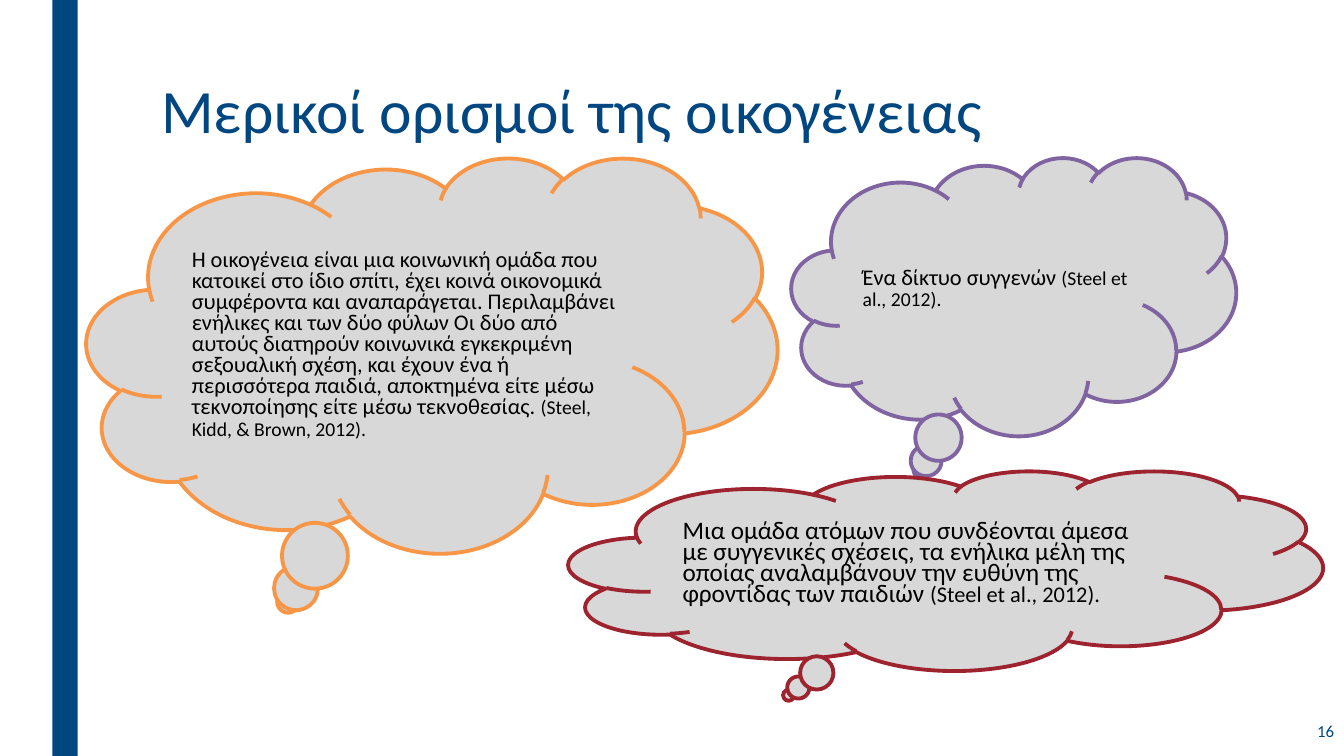
from pptx import Presentation
from pptx.dml.color import RGBColor
from pptx.enum.shapes import MSO_SHAPE as Kind
from pptx.enum.text import MSO_ANCHOR as Anchor, MSO_AUTO_SIZE as Fit, PP_ALIGN as Align
from pptx.util import Inches, Pt


def color(code):
    return RGBColor.from_string(code)


def style(para, size, code):
    para.font.name = "Calibri"
    para.font.size = Pt(size)
    para.font.color.rgb = color(code)


NAVY = "004680"

deck = Presentation()
deck.slide_width = Inches(13.33)
deck.slide_height = Inches(7.5)
slide = deck.slides.add_slide(deck.slide_layouts[5])
shapes = slide.shapes

bar = shapes.add_shape(Kind.RECTANGLE, Inches(0.52), 0, Inches(0.25), Inches(7.5))
bar.shadow.inherit = False
bar.fill.solid()
bar.fill.fore_color.rgb = color(NAVY)
bar.line.fill.background()

title = shapes.title
title.left, title.top = Inches(1.5), Inches(0.75)
title.width, title.height = Inches(10.5), Inches(1.62)
frame = title.text_frame
frame.text = "Μερικοί ορισμοί της οικογένειας"
frame.auto_size = Fit.NONE
frame.vertical_anchor = Anchor.TOP
para = frame.paragraphs[0]
para.alignment = Align.LEFT
para.line_spacing = 0.89
style(para, 44, NAVY)

page = shapes.add_textbox(Inches(11.58), Inches(7.03), Inches(1.75), Inches(0.44))
frame = page.text_frame
frame.word_wrap = True
frame.vertical_anchor = Anchor.MIDDLE
frame.text = "16"
para = frame.paragraphs[0]
para.alignment = Align.RIGHT
style(para, 12, NAVY)

clouds = [
    ((0.86, 1.56, 6.85, 3.92), "F79646", 16,
     "Η οικογένεια είναι μια κοινωνική ομάδα που κατοικεί στο ίδιο σπίτι, "
     "έχει κοινά οικονομικά συμφέροντα και αναπαράγεται. Περιλαμβάνει ενήλικες "
     "και των δύο φύλων Οι δύο από αυτούς διατηρούν κοινωνικά εγκεκριμένη "
     "σεξουαλική σχέση, και έχουν ένα ή περισσότερα παιδιά, αποκτημένα είτε "
     "μέσω τεκνοποίησης είτε μέσω τεκνοθεσίας. ",
     "(Steel, Kidd, & Brown, 2012)."),
    ((7.85, 1.56, 4.41, 2.76), "8064A2", 16,
     "Ένα δίκτυο συγγενών ",
     "(Steel et al., 2012)."),
    ((5.64, 4.67, 7.48, 1.98), "9D232F", 18,
     "Μια ομάδα ατόμων που συνδέονται άμεσα με συγγενικές σχέσεις, τα ενήλικα "
     "μέλη της οποίας αναλαμβάνουν την ευθύνη της φροντίδας των παιδιών ",
     "(Steel et al., 2012)."),
]
for box, edge, size, text, source in clouds:
    cloud = shapes.add_shape(Kind.CLOUD_CALLOUT, *map(Inches, box))
    cloud.shadow.inherit = False
    cloud.fill.solid()
    cloud.fill.fore_color.rgb = color("D8D8D8")
    cloud.line.color.rgb = color(edge)
    cloud.line.width = Pt(2.75)
    frame = cloud.text_frame
    frame.word_wrap = True
    frame.vertical_anchor = Anchor.MIDDLE
    para = frame.paragraphs[0]
    para.alignment = Align.LEFT
    para.line_spacing = Pt(15)
    style(para, size, "000000")
    para.add_run().text = text
    cite = para.add_run()
    cite.text = source
    cite.font.size = Pt(size - 2)

deck.save("out.pptx")
